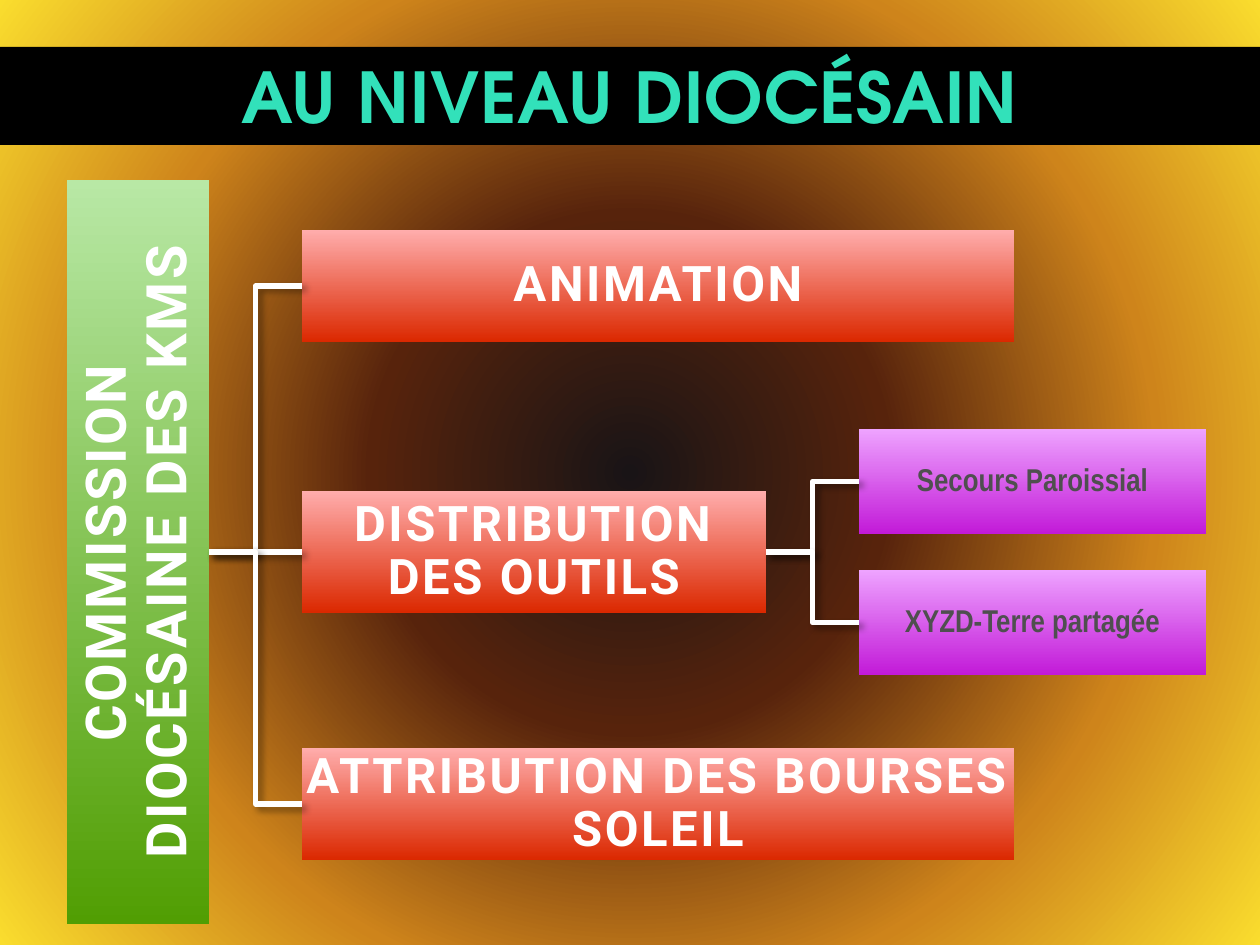
from lxml import etree
from pptx import Presentation
from pptx.dml.color import RGBColor
from pptx.enum.shapes import MSO_CONNECTOR as CONNECTOR, MSO_SHAPE as SHAPE
from pptx.enum.text import MSO_ANCHOR as ANCHOR, PP_ALIGN as ALIGN
from pptx.oxml import parse_xml
from pptx.oxml.ns import nsdecls, qn
from pptx.util import Pt

SCALE = 914400 / 126
COLORS = {
    "black": "000000", "white": "FFFFFF", "grey": "4F4F4F",
    "green": ("519E03", "B8E8A5"),
    "red": ("DB2800", "FFADAC"),
    "purple": ("C21AD8", "EEA3FF"),
    "teal": ("32E1BA", "1FA386"),
    "glow": {0: "191416", 33: "57230C", 67: "CE841B", 100: "FADD2E"},
}


def paint_gradient(fill, colors, angle, start=0):
    fill.gradient()
    fill.gradient_angle = angle
    for stop, color, position in zip(fill.gradient_stops, colors, (start, 1)):
        stop.color.rgb = RGBColor.from_string(color)
        stop.position = position


def add_box(slide, text, bounds, font_format, spacing, margin):
    shape = slide.shapes.add_shape(SHAPE.RECTANGLE, *[round(value * SCALE) for value in bounds])
    shape.shadow.inherit = False
    shape.line.fill.background()
    frame = shape.text_frame
    frame_format = {"word_wrap": True, "vertical_anchor": ANCHOR.MIDDLE}
    for side in ("left", "right", "top", "bottom"):
        frame_format[f"margin_{side}"] = round(margin * SCALE)
    for name, value in frame_format.items():
        setattr(frame, name, value)
    paragraph = frame.paragraphs[0]
    for name, value in {"alignment": ALIGN.CENTER, "line_spacing": 0.9}.items():
        setattr(paragraph, name, value)
    run = paragraph.add_run()
    run.text = text
    for name, value in font_format.items():
        setattr(run.font, name, value)
    run.font.color.rgb = RGBColor.from_string(COLORS["white"])
    run._r.get_or_add_rPr().set("spc", str(spacing))
    return shape


presentation = Presentation()
presentation.slide_width = round(1260 * SCALE)
presentation.slide_height = round(945 * SCALE)
slide = presentation.slides.add_slide(presentation.slide_layouts[6])

background = slide.background.fill
background.gradient()
gradient = slide._element.find(".//" + qn("a:gradFill"))
stops = gradient.find(qn("a:gsLst"))
for stop in list(stops):
    stops.remove(stop)
for position, color in COLORS["glow"].items():
    stop = etree.SubElement(stops, qn("a:gs"), pos=str(position * 1000))
    etree.SubElement(stop, qn("a:srgbClr"), val=color)
gradient.replace(gradient.find(qn("a:lin")), parse_xml(
    f'<a:path {nsdecls("a")} path="circle">'
    '<a:fillToRect l="50000" t="50000" r="50000" b="50000"/></a:path>'))

title_font = {"name": "TeX Gyre Adventor", "size": Pt(40), "bold": True}
title = add_box(slide, "AU NIVEAU DIOCÉSAIN", (0, 47, 1260, 98), title_font, 50, 6)
title.fill.solid()
title.fill.fore_color.rgb = RGBColor.from_string(COLORS["black"])
title_paragraph = title.text_frame.paragraphs[0]
title_paragraph.line_spacing = 1.0
paint_gradient(title_paragraph.runs[0].font.fill, COLORS["teal"], 270, 0.25)

commission_font = {"name": "Roboto", "size": Pt(32), "bold": True}
commission = add_box(slide, "COMMISSION DIOCÉSAINE DES KMS", (67, 180, 142, 744),
                     commission_font, 150, 2)
commission.text_frame._txBody.bodyPr.set("vert", "vert270")
paint_gradient(commission.fill, COLORS["green"], 90)

task_font = {"name": "Roboto", "size": Pt(28), "bold": True}
tasks = []
for text, top, width, height in (
    ("ANIMATION", 230, 712, 112),
    ("DISTRIBUTION DES OUTILS", 491, 464, 122),
    ("ATTRIBUTION DES BOURSES SOLEIL", 748, 712, 112),
):
    task = add_box(slide, text, (302, top, width, height), task_font, 150, 2)
    paint_gradient(task.fill, COLORS["red"], 90)
    tasks.append(task)

partner_font = {"name": "Arial Narrow", "size": Pt(18), "bold": True}
partners = []
for index, text in enumerate(("Secours Paroissial", "XYZD-Terre partagée")):
    partner = add_box(slide, text, (859, 429 + 141 * index, 347, 105), partner_font, 0, 1)
    paint_gradient(partner.fill, COLORS["purple"], 90)
    partner.text_frame.paragraphs[0].runs[0].font.color.rgb = RGBColor.from_string(COLORS["grey"])
    partners.append(partner)

links = [(commission, task) for task in tasks] + [(tasks[1], partner) for partner in partners]
for parent, child in links:
    straight = child is tasks[1]
    kind = CONNECTOR.STRAIGHT if straight else CONNECTOR.ELBOW
    connector = slide.shapes.add_connector(
        kind, parent.left + parent.width, parent.top + parent.height // 2,
        child.left, child.top + child.height // 2)
    connector.begin_connect(parent, 3)
    connector.end_connect(child, 1)
    connector.line.width = Pt(3)
    connector.line.color.rgb = RGBColor.from_string(COLORS["white"])
    connector._element.spPr.append(parse_xml(
        f'<a:effectLst {nsdecls("a")}>'
        '<a:outerShdw blurRad="50800" dist="38100" dir="2700000" rotWithShape="0">'
        f'<a:srgbClr val="{COLORS["black"]}"><a:alpha val="40000"/></a:srgbClr>'
        '</a:outerShdw></a:effectLst>'))

presentation.save("out.pptx")
